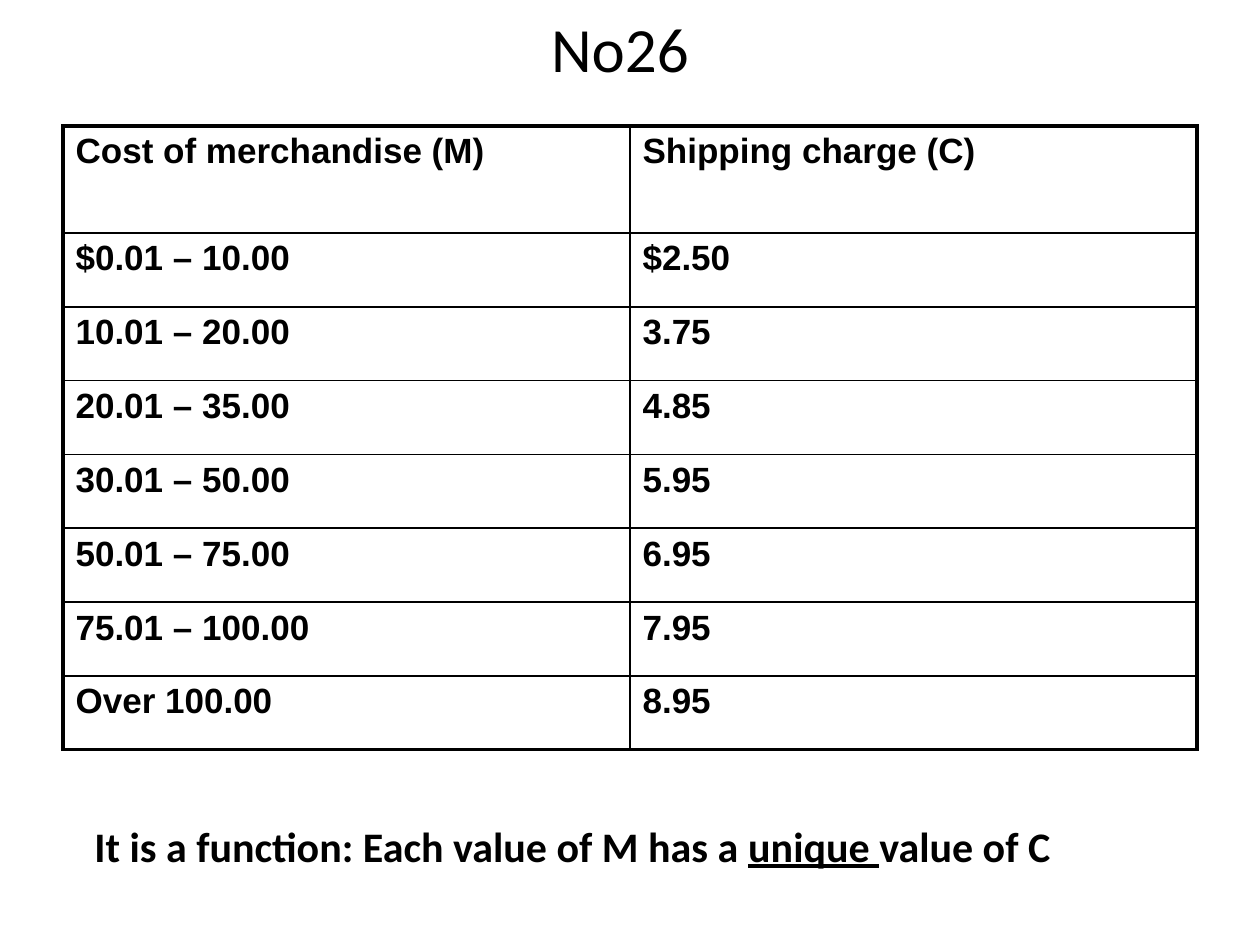
from lxml import etree
from pptx import Presentation
from pptx import util as u
from pptx.dml.color import RGBColor
from pptx.enum import text
from pptx.oxml import ns

PX = u.Inches(1) / 126
BLACK = RGBColor(0, 0, 0)
CHARGES = [
    ("Cost of merchandise (M)", "Shipping charge (C)"),
    ("$0.01 – 10.00", "$2.50"),
    ("10.01 – 20.00", "3.75"),
    ("20.01 – 35.00", "4.85"),
    ("30.01 – 50.00", "5.95"),
    ("50.01 – 75.00", "6.95"),
    ("75.01 – 100.00", "7.95"),
    ("Over 100.00", "8.95"),
]


def px(length):
    """Turn px into EMU."""
    return u.Emu(round(length * PX))


def add_run(paragraph, words, size, font, bold=False, underline=False):
    """Append one formatted run."""
    run = paragraph.add_run()
    run.text = words
    run.font.size = u.Pt(size)
    run.font.name = font
    run.font.bold = bold
    run.font.underline = underline
    run.font.color.rgb = BLACK


def add_title(slide, left, top, width, height):
    """Place the centred title in the box."""
    title = slide.shapes.title
    title.left, title.top, title.width, title.height = map(px, (left, top, width, height))
    title.text_frame.vertical_anchor = text.MSO_ANCHOR.MIDDLE
    heading = title.text_frame.paragraphs[0]
    heading.alignment = text.PP_ALIGN.CENTER
    add_run(heading, "No26", 36, "Calibri")


def set_borders(cell, outer_sides):
    """Draw thick lines on the outer sides and thin ones elsewhere."""
    properties = cell._tc.get_or_add_tcPr()
    for position, side in enumerate("LRTB"):
        width = u.Pt(2.25 if side in outer_sides else 1)
        line = etree.Element(ns.qn(f"a:ln{side}"), w=str(width))
        fill = etree.SubElement(line, ns.qn("a:solidFill"))
        etree.SubElement(fill, ns.qn("a:srgbClr"), val=str(BLACK))
        properties.insert(position, line)


def set_space_before(paragraph, percent):
    """Set the space before a paragraph as a share of its line."""
    space = etree.SubElement(paragraph._p.get_or_add_pPr(), ns.qn("a:spcBef"))
    etree.SubElement(space, ns.qn("a:spcPct"), val=str(percent * 1000))


def add_charges(slide, left, top, width, height, header_height):
    """Place the table of shipping charges in the box."""
    last = len(CHARGES) - 1
    table = slide.shapes.add_table(
        len(CHARGES), 2, *map(px, (left, top, width, height))).table
    table.first_row = table.horz_banding = False
    for column in table.columns:
        column.width = px(width / 2)
    for r, charge in enumerate(CHARGES):
        table.rows[r].height = px((height - header_height) / last if r else header_height)
        for c, words in enumerate(charge):
            cell = table.cell(r, c)
            cell.fill.background()
            set_borders(cell, "LR"[c] + {0: "T", last: "B"}.get(r, ""))
            entry = cell.text_frame.paragraphs[0]
            set_space_before(entry, 20)
            add_run(entry, words, 20, "Arial", bold=True)


def add_conclusion(slide, left, top, width, height):
    """Place the concluding sentence in the box."""
    frame = slide.shapes.add_textbox(*map(px, (left, top, width, height))).text_frame
    frame.word_wrap = False
    frame.auto_size = text.MSO_AUTO_SIZE.SHAPE_TO_FIT_TEXT
    sentence = frame.paragraphs[0]
    sentence.alignment = text.PP_ALIGN.LEFT
    add_run(sentence, "It is a function: Each value of M has a ", 24, "Calibri", bold=True)
    add_run(sentence, "unique ", 24, "Calibri", bold=True, underline=True)
    add_run(sentence, "value of C", 24, "Calibri", bold=True)


def main():
    """Build the slide and save it."""
    deck = Presentation()
    deck.slide_width, deck.slide_height = px(1260), px(945)
    slide = deck.slides.add_slide(deck.slide_layouts[5])
    add_title(slide, 53, 0, 1134, 95)
    add_charges(slide, 63, 126, 1134, 624, 107)
    add_conclusion(slide, 82, 814, 1133, 63)
    deck.save("out.pptx")


if __name__ == "__main__":
    main()
